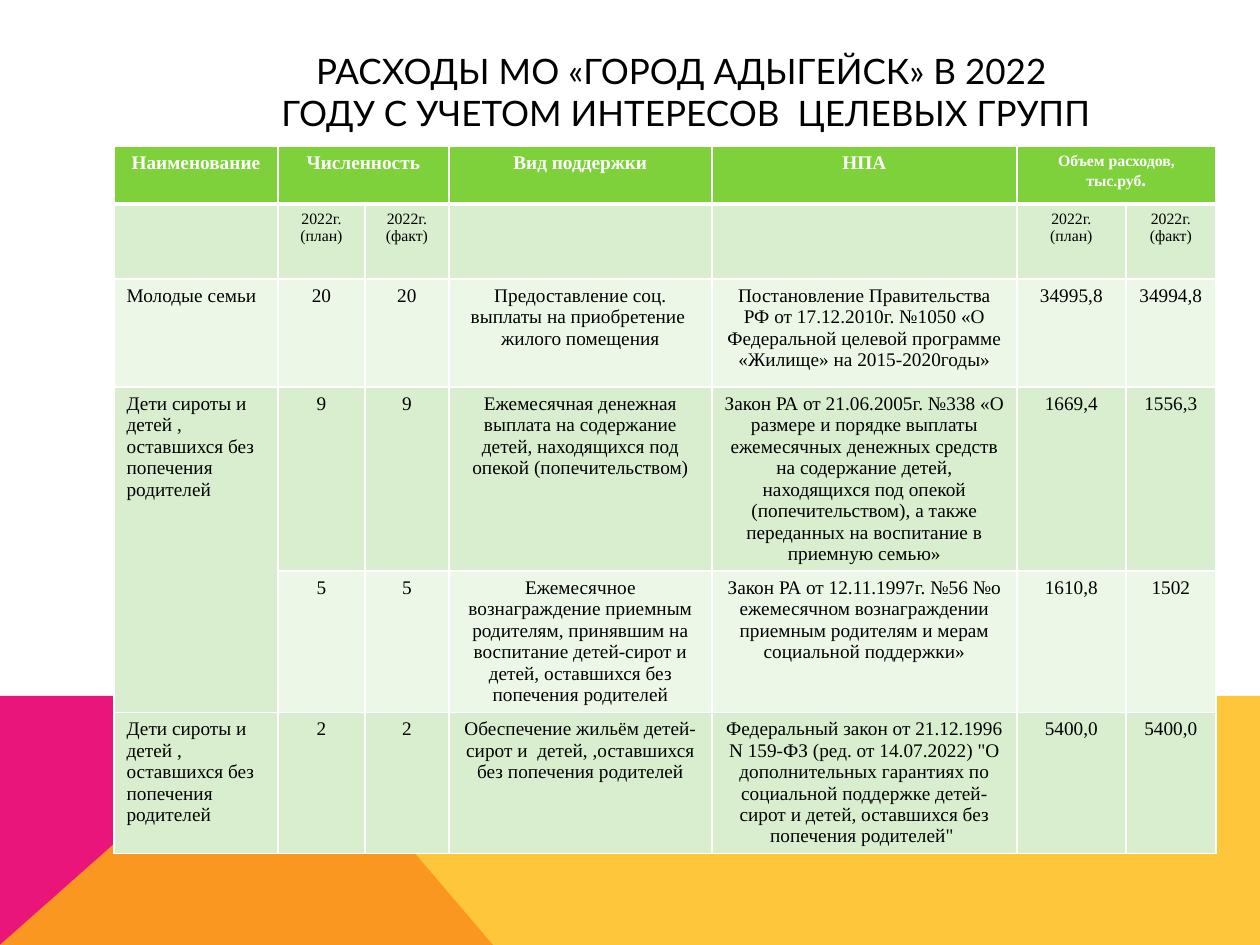
import pptx
import pptx.dml.color
import pptx.enum.text
import pptx.oxml
import pptx.oxml.ns
import pptx.util
import lxml.etree

PX = 914400 // 126
SLIDE = (1260, 945)
TITLE = "РАСХОДЫ МО «ГОРОД АДЫГЕЙСК» В 2022\v ГОДУ С УЧЕТОМ ИНТЕРЕСОВ  ЦЕЛЕВЫХ ГРУПП"
TITLE_BOX = (233, 3, 897, 178)
PINK_AREA = [(0, 945), (0, 696), (281, 696), (493, 945)]
YELLOW_AREA = [(0, 945), (281, 696), (1260, 696), (1260, 945)]

TABLE_LEFT, TABLE_TOP = 114, 146
COLUMNS = [164, 87, 84, 263, 305, 109, 90]
ROWS = [58, 75, 108, 184, 141, 141]
PLAN, FACT = "2022г. (план)", "2022г. (факт)"
ORPHANS = "Дети сироты и детей , оставшихся без попечения родителей"
CELLS = [
    ["Наименование", "Численность", "", "Вид поддержки", "НПА", "Объем расходов, тыс.руб", ""],
    ["", PLAN, FACT, "", "", PLAN, FACT],
    ["Молодые семьи", "20", "20",
     "Предоставление соц. выплаты на приобретение  жилого помещения",
     "Постановление Правительства РФ от 17.12.2010г. №1050 «О Федеральной целевой "
     "программе «Жилище» на 2015-2020годы»", "34995,8", "34994,8"],
    [ORPHANS, "9", "9",
     "Ежемесячная денежная выплата на содержание детей, находящихся под опекой (попечительством)",
     "Закон РА от 21.06.2005г. №338 «О размере и порядке выплаты ежемесячных денежных "
     "средств на содержание детей, находящихся под опекой (попечительством), а также "
     "переданных на воспитание в приемную семью»", "1669,4", "1556,3"],
    ["", "5", "5",
     "Ежемесячное вознаграждение приемным родителям, принявшим на воспитание "
     "детей-сирот и детей, оставшихся без попечения родителей",
     "Закон РА от 12.11.1997г. №56 №о ежемесячном вознаграждении приемным родителям "
     "и мерам социальной поддержки»", "1610,8", "1502"],
    [ORPHANS, "2", "2",
     "Обеспечение жильём детей-сирот и  детей, ,оставшихся без попечения родителей",
     "Федеральный закон от 21.12.1996 N 159-ФЗ (ред. от 14.07.2022) \"О дополнительных "
     "гарантиях по социальной поддержке детей-сирот и детей, оставшихся без попечения "
     "родителей\" ", "5400,0", "5400,0"],
]
MERGES = [((0, 1), (0, 2)), ((0, 5), (0, 6)), ((3, 0), (4, 0))]
FILLS = ["7FD13B", "D8EECE", "ECF7E8", "D8EECE", "ECF7E8", "D8EECE"]


def color(value):
    return pptx.dml.color.RGBColor.from_string(value)


def format_text(paragraph, font, size, value, bold=False, centered=True):
    align = pptx.enum.text.PP_ALIGN
    paragraph.alignment = align.CENTER if centered else align.LEFT
    for span in paragraph.runs:
        span.font.name = font
        span.font.size = pptx.util.Pt(size)
        span.font.bold = bold
        span.font.color.rgb = color(value)


def add_area(page, points, value, opacity=100):
    builder = page.shapes.build_freeform(*points[0], scale=PX)
    builder.add_line_segments(points[1:], close=True)
    area = builder.convert_to_shape()
    area.shadow.inherit = False
    area.line.fill.background()
    area.fill.solid()
    area.fill.fore_color.rgb = color(value)
    if opacity < 100:
        tone = area.fill._xPr.find(".//" + pptx.oxml.ns.qn("a:srgbClr"))
        alpha = lxml.etree.SubElement(tone, pptx.oxml.ns.qn("a:alpha"))
        alpha.set("val", str(opacity * 1000))


def add_borders(cell, row):
    thick = {"T": row == 1, "B": row == 0}
    properties = cell._tc.get_or_add_tcPr()
    for side in "LRTB":
        width = pptx.util.Pt(3 if thick.get(side) else 1)
        properties.append(pptx.oxml.parse_xml(
            f'<a:ln{side} {pptx.oxml.ns.nsdecls("a")} w="{width}"><a:solidFill>'
            f'<a:srgbClr val="FFFFFF"/></a:solidFill></a:ln{side}>'))


def add_title(page):
    title = page.shapes.title
    title.left, title.top, title.width, title.height = [side * PX for side in TITLE_BOX]
    frame = title.text_frame
    frame.text = TITLE
    frame.word_wrap = True
    frame.auto_size = pptx.enum.text.MSO_AUTO_SIZE.NONE
    frame.vertical_anchor = pptx.enum.text.MSO_ANCHOR.MIDDLE
    format_text(frame.paragraphs[0], "Lato", 20, "000000")


def add_expenses_table(page):
    table = page.shapes.add_table(
        len(ROWS), len(COLUMNS), TABLE_LEFT * PX, TABLE_TOP * PX,
        sum(COLUMNS) * PX, sum(ROWS) * PX).table
    for column, width in zip(table.columns, COLUMNS):
        column.width = width * PX
    for row, height in zip(table.rows, ROWS):
        row.height = height * PX
    for start, end in MERGES:
        table.cell(*start).merge(table.cell(*end))
    for r, texts in enumerate(CELLS):
        for c, text in enumerate(texts):
            cell = table.cell(r, c)
            add_borders(cell, r)
            cell.fill.solid()
            cell.fill.fore_color.rgb = color(FILLS[r])
            if text:
                cell.text = text
                size = 9 if r == 1 or (r, c) == (0, 5) else 11
                format_text(cell.text_frame.paragraphs[0], "Times New Roman", size,
                            "000000" if r else "FFFFFF", r == 0, r == 0 or c > 0)
    heading = table.cell(0, 5).text_frame.paragraphs[0]
    span = heading.add_run()
    span.text = "."
    span.font.name = "Times New Roman"
    span.font.size = pptx.util.Pt(11)
    span.font.bold = True
    span.font.color.rgb = color("FFFFFF")


def main():
    deck = pptx.Presentation()
    deck.slide_width, deck.slide_height = [side * PX for side in SLIDE]
    page = deck.slides.add_slide(deck.slide_layouts[5])
    add_area(page, PINK_AREA, "EA157A")
    add_area(page, YELLOW_AREA, "FEB80A", 80)
    add_title(page)
    add_expenses_table(page)
    deck.save("out.pptx")


if __name__ == "__main__":
    main()
